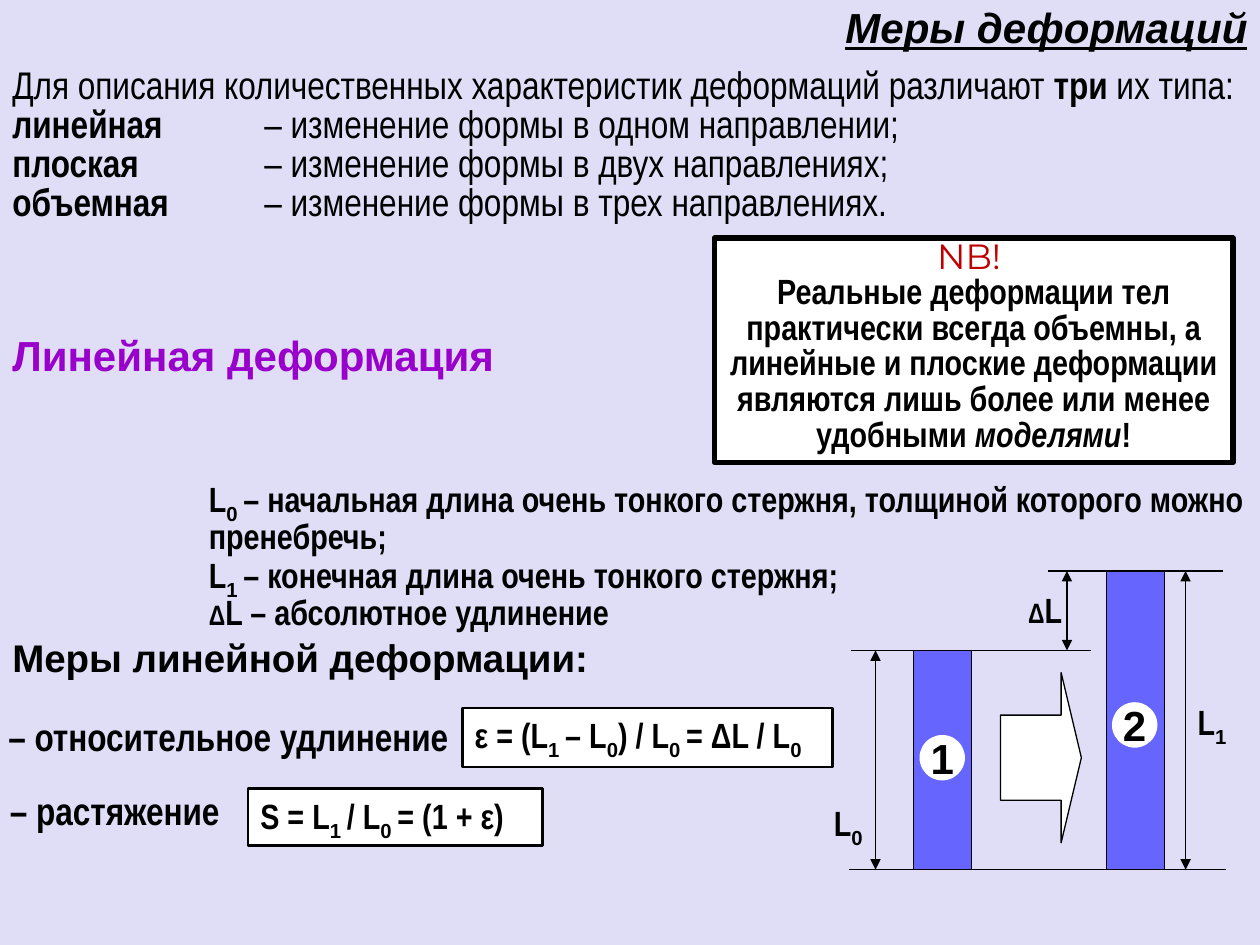
from collections import namedtuple

from lxml import etree
from pptx import Presentation
from pptx.dml.color import RGBColor
from pptx.enum import shapes, text
from pptx.oxml import ns
from pptx.util import Cm, Pt

Box = namedtuple("Box", "left top width height")
NARROW, WIDE = "Arial Narrow", "Arial"
CENTER, RIGHT = text.PP_ALIGN.CENTER, text.PP_ALIGN.RIGHT


def color(value):
    return RGBColor.from_string(value)


def inside(box, left, top, width, height):
    return Box(box.left + left, box.top + top, width, height)


def lengths(box):
    return [Cm(value) for value in box]


def add_text_box(slide, box, wrap=True):
    shape = slide.shapes.add_textbox(*lengths(box))
    shape.text_frame.word_wrap = wrap
    return shape


def add_preset(slide, kind, box, fill, line="000000", width=0.75):
    shape = slide.shapes.add_shape(kind, *lengths(box))
    shape.shadow.inherit = False
    shape.fill.solid()
    shape.fill.fore_color.rgb = color(fill)
    shape.line.color.rgb = color(line)
    shape.line.width = Pt(width)
    shape.text_frame.vertical_anchor = text.MSO_ANCHOR.TOP
    return shape


def format_paragraph(paragraph, size, name=NARROW, bold=True, fill="000000",
                     spacing=None, align=text.PP_ALIGN.LEFT):
    paragraph.alignment = align
    paragraph.line_spacing = spacing
    font = paragraph.font
    font.size, font.name, font.bold = Pt(size), name, bold
    font.color.rgb = color(fill)


def add_run(paragraph, words, **styles):
    run = paragraph.add_run()
    run.text = words
    for key, value in styles.items():
        setattr(run.font, key, value)
    return run


def add_indexed(paragraph, *parts):
    for number, part in enumerate(parts):
        if number % 2:
            run = add_run(paragraph, part, name=WIDE)
            run.font._element.set("baseline", "-25000")
        else:
            add_run(paragraph, part)


def add_delta(paragraph, rest):
    add_run(paragraph, "Δ", size=Pt(16))
    add_run(paragraph, rest)


def add_phrase(slide, box, words, size, **styles):
    paragraph = add_text_box(slide, box).text_frame.paragraphs[0]
    format_paragraph(paragraph, size, **styles)
    add_run(paragraph, words)
    return paragraph


def add_title(slide, box):
    paragraph = add_phrase(slide, box, "Меры деформаций", 24, name=WIDE, align=RIGHT)
    paragraph.font.italic = paragraph.font.underline = True
    paragraph._p.getparent().bodyPr.set("anchor", "ctr")


def add_types(slide, box):
    frame = add_text_box(slide, box).text_frame
    paragraph = frame.paragraphs[0]
    format_paragraph(paragraph, 22, bold=False, spacing=0.85)
    add_run(paragraph, "Для описания количественных характеристик деформаций различают ")
    add_run(paragraph, "три", bold=True)
    add_run(paragraph, " их типа:")
    for name, meaning in (("линейная", "в одном направлении;"),
                          ("плоская", "в двух направлениях;"),
                          ("объемная", "в трех направлениях.")):
        paragraph = frame.add_paragraph()
        tabs = etree.SubElement(paragraph._p.get_or_add_pPr(), ns.qn("a:tabLst"))
        etree.SubElement(tabs, ns.qn("a:tab"), pos=str(Cm(5.08)), algn="l")
        format_paragraph(paragraph, 22, bold=False, spacing=0.85)
        add_run(paragraph, name, bold=True)
        add_run(paragraph, f" \t– изменение формы {meaning}")


def add_note(slide, box):
    shape = add_preset(slide, shapes.MSO_SHAPE.RECTANGLE, box, "FFFFFF", width=3)
    frame = shape.text_frame
    heading, body = frame.paragraphs[0], frame.add_paragraph()
    format_paragraph(heading, 20, "Montserrat", False, "C00000", 0.75, CENTER)
    add_run(heading, "NB! ")
    format_paragraph(body, 20, spacing=0.85, align=CENTER)
    add_run(body, "Реальные деформации тел практически всегда объемны, а линейные и "
                  "плоские деформации являются лишь более или менее удобными ")
    add_run(body, "моделями", italic=True)
    add_run(body, "!")


def add_definitions(slide, box):
    frame = add_text_box(slide, box).text_frame
    initial, final, change = frame.paragraphs[0], frame.add_paragraph(), frame.add_paragraph()
    for paragraph in (initial, final, change):
        format_paragraph(paragraph, 20, spacing=0.85)
    add_indexed(initial, "L", "0 ", "– начальная длина очень тонкого стержня, "
                                    "толщиной которого можно пренебречь;")
    add_indexed(final, "L", "1 ", "– конечная длина очень тонкого стержня;")
    add_delta(change, "L – абсолютное удлинение")


def add_formula(slide, box, *parts):
    shape = add_preset(slide, shapes.MSO_SHAPE.RECTANGLE, box, "FFFFFF", width=1.5)
    paragraph = shape.text_frame.paragraphs[0]
    format_paragraph(paragraph, 20, spacing=0.9)
    add_indexed(paragraph, *parts)


def add_measures(slide, box):
    add_phrase(slide, inside(box, 0, 0, 12.22, 1.02), "Меры линейной деформации:", 22,
               name=WIDE, spacing=0.85)
    add_phrase(slide, inside(box, -0.08, 1.75, 11.3, 0.86), "– относительное удлинение",
               22, spacing=0.65)
    add_phrase(slide, inside(box, -0.05, 3.23, 8.15, 0.86), "– растяжение", 22, spacing=0.65)
    add_formula(slide, inside(box, 9.32, 1.47, 7.47, 1.19),
                "ε = (L", "1 ", "– L", "0", ") / L", "0 ", "= ΔL / L", "0")
    add_formula(slide, inside(box, 5, 3.1, 5.94, 1.14), "S = L", "1 ", "/ L", "0 ", "= (1 + ε)")


def add_line(slide, box, x1, y1, x2, y2, arrows=False):
    ends = (box.left + x1, box.top + y1, box.left + x2, box.top + y2)
    line = slide.shapes.add_connector(shapes.MSO_CONNECTOR.STRAIGHT, *lengths(ends))
    line.line.color.rgb = color("000000")
    line.line.width = Pt(0.75)
    if arrows:
        for end in ("a:headEnd", "a:tailEnd"):
            etree.SubElement(line.line._get_or_add_ln(), ns.qn(end), type="triangle")
    etree.SubElement(line._element.spPr, ns.qn("a:effectLst"))


def add_rod(slide, box, number, left, top, base, mark_top):
    add_preset(slide, shapes.MSO_SHAPE.RECTANGLE,
               inside(box, left, top, 1.17, base - top), "6666FF")
    mark = add_preset(slide, shapes.MSO_SHAPE.OVAL,
                      inside(box, left + 0.13, mark_top, 0.89, 0.89), "FFFFFF", "FFFFFF")
    frame = mark.text_frame
    frame.word_wrap = False
    frame.vertical_anchor = text.MSO_ANCHOR.MIDDLE
    format_paragraph(frame.paragraphs[0], 24, WIDE, align=CENTER)
    add_run(frame.paragraphs[0], number)


def add_diagram(slide, box):
    top, middle, base = 0.01, 1.61, 6.03
    add_line(slide, box, 0.62, base, 8.21, base)
    add_line(slide, box, 0.65, middle, 5.5, middle)
    add_line(slide, box, 4.63, top, 8.16, top)
    add_rod(slide, box, "1", 1.92, middle, base, 3.33)
    add_rod(slide, box, "2", 5.8, top, base, 2.67)
    for x, start, end in ((1.15, middle, base), (7.4, top, base), (5.01, top, middle)):
        add_line(slide, box, x, start, x, end, arrows=True)
    arrow = add_preset(slide, shapes.MSO_SHAPE.RIGHT_ARROW,
                       inside(box, 3.67, 2.06, 1.63, 3.43), "FFFFFF")
    arrow.adjustments[0], arrow.adjustments[1] = 0.5, 0.25
    for index, left, label_top, width in (("0", 0.04, 4.53, 1.12), ("1", 6.97, 2.5, 1.93)):
        label = add_text_box(slide, inside(box, left, label_top, width, 1.12), wrap=False)
        paragraph = label.text_frame.paragraphs[0]
        format_paragraph(paragraph, 20, align=CENTER)
        add_indexed(paragraph, "L", index)
    label = add_text_box(slide, inside(box, 3.49, 0.23, 2.16, 1.09))
    paragraph = label.text_frame.paragraphs[0]
    format_paragraph(paragraph, 20, align=CENTER)
    add_delta(paragraph, "L")


def main():
    presentation = Presentation()
    presentation.slide_width, presentation.slide_height = Cm(25.4), Cm(19.05)
    slide = presentation.slides.add_slide(presentation.slide_layouts[6])
    slide.background.fill.solid()
    slide.background.fill.fore_color.rgb = color("DFDEF6")
    add_measures(slide, Box(0, 12.8, 16.8, 4.3))
    add_title(slide, Box(14.17, 0, 11.23, 1.09))
    add_types(slide, Box(0, 1.24, 25.4, 3.56))
    add_diagram(slide, Box(16.5, 11.5, 8.9, 6.1))
    add_definitions(slide, Box(3.96, 9.55, 21.44, 3.18))
    add_phrase(slide, Box(0, 6.68, 10.52, 1.02), "Линейная деформация", 24,
               name=WIDE, fill="9900CC", spacing=0.85)
    add_note(slide, Box(14.4, 4.8, 10.46, 4.52))
    presentation.save("out.pptx")


if __name__ == "__main__":
    main()
